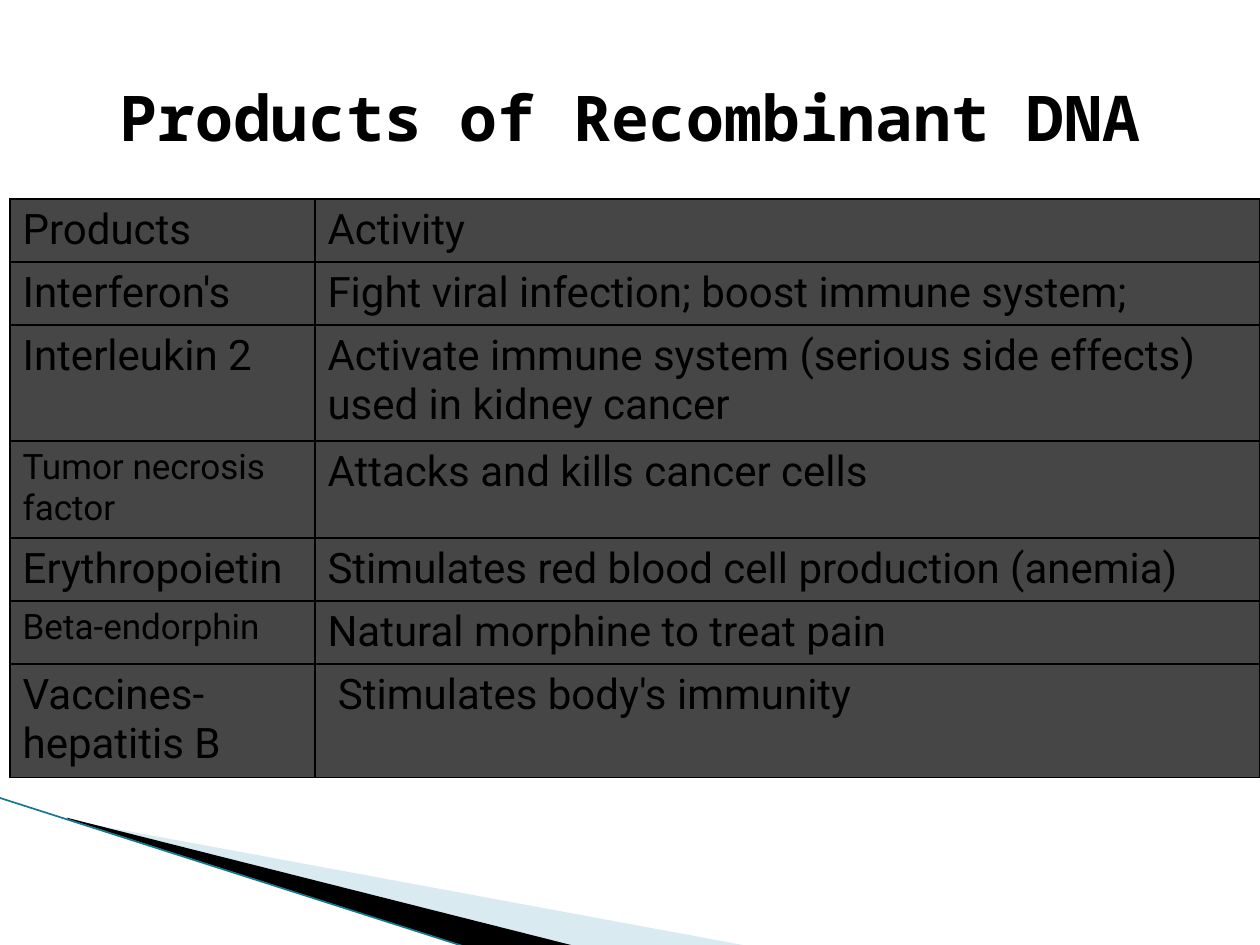
from lxml import etree
from pptx import Presentation
from pptx.dml.color import RGBColor
from pptx.enum import shapes, text
from pptx.oxml import ns
from pptx.util import Inches, Pt

BLACK = RGBColor(0x00, 0x00, 0x00)
CELL_GREY = RGBColor(0x46, 0x46, 0x46)
PALE_BLUE = RGBColor(0xA0, 0xCB, 0xDC)
TEAL = RGBColor(0x16, 0x78, 0x8C)

TITLE_FONT = {"name": "Noto Sans Mono", "size": Pt(36), "bold": True}
CELL_FONT = {"name": "Roboto", "size": Pt(24)}
SMALL_FONT = {**CELL_FONT, "size": Pt(20)}

ROWS = [
    (0.5, "Products", "Activity"),
    (0.5, "Interferon's", "Fight viral infection; boost immune system;"),
    (0.92, "Interleukin 2",
     "Activate immune system (serious side effects) used in kidney cancer"),
    (0.77, "Tumor necrosis factor", "Attacks and kills cancer cells"),
    (0.5, "Erythropoietin", "Stimulates red blood cell production (anemia)"),
    (0.5, "Beta-endorphin", "Natural morphine to treat pain"),
    (0.9, "Vaccines-hepatitis B", " Stimulates body's immunity"),
]
SMALL_LABELS = {"Tumor necrosis factor", "Beta-endorphin"}
WEDGES = [
    (PALE_BLUE, 40, [(0.55, 6.51), (5.95, 7.51), (4.56, 7.51), (0.55, 6.5)]),
    (BLACK, 100, [(0.53, 6.49), (4.57, 7.51), (3.72, 7.52), (0.54, 6.5)]),
]


def format_font(font, values):
    for name, value in values.items():
        setattr(font, name, value)
    font.color.rgb = BLACK


def add_border(cell, side):
    border = etree.SubElement(cell._tc.get_or_add_tcPr(), ns.qn(f"a:{side}"), w=str(Pt(1)))
    fill = etree.SubElement(border, ns.qn("a:solidFill"))
    etree.SubElement(fill, ns.qn("a:srgbClr"), val=str(BLACK))


deck = Presentation()
deck.slide_width, deck.slide_height = Inches(10), Inches(7.5)
page = deck.slides.add_slide(deck.slide_layouts[5])

for color, opacity, points in WEDGES:
    corners = [(Inches(x), Inches(y)) for x, y in points]
    builder = page.shapes.build_freeform(*corners[0])
    builder.add_line_segments(corners[1:])
    wedge = builder.convert_to_shape()
    wedge.shadow.inherit = False
    wedge.line.fill.background()
    wedge.fill.solid()
    wedge.fill.fore_color.rgb = color
    if opacity < 100:
        tint = wedge._element.spPr.find(".//" + ns.qn("a:srgbClr"))
        etree.SubElement(tint, ns.qn("a:alpha"), val=str(opacity * 1000))

edge = page.shapes.add_connector(
    shapes.MSO_CONNECTOR.STRAIGHT,
    Inches(-0.01), Inches(6.33), Inches(3.71), Inches(7.52))
edge.line.color.rgb = TEAL
edge.line.width = Pt(0.95)
etree.SubElement(edge._element.spPr, ns.qn("a:effectLst"))

title = page.shapes.title
title.left, title.top = Inches(0.5), Inches(0.3)
title.width, title.height = Inches(9), Inches(1.25)
title.text_frame.text = "Products of Recombinant DNA"
title.text_frame.vertical_anchor = text.MSO_ANCHOR.MIDDLE
title.text_frame.paragraphs[0].alignment = text.PP_ALIGN.CENTER
format_font(title.text_frame.paragraphs[0].runs[0].font, TITLE_FONT)

table = page.shapes.add_table(
    len(ROWS), 2, Inches(0.08), Inches(1.58), Inches(9.92), Inches(4.59)).table
table.first_row = table.horz_banding = False
for column, width in zip(table.columns, (2.42, 7.5)):
    column.width = Inches(width)

for row, (height, *labels) in zip(table.rows, ROWS):
    row.height = Inches(height)
    for cell, label in zip(row.cells, labels):
        cell.text = label
        span = cell.text_frame.paragraphs[0].runs[0]
        format_font(span.font, SMALL_FONT if label in SMALL_LABELS else CELL_FONT)
        for side in ("lnL", "lnR", "lnT", "lnB"):
            add_border(cell, side)
        cell.fill.solid()
        cell.fill.fore_color.rgb = CELL_GREY

deck.save("out.pptx")
